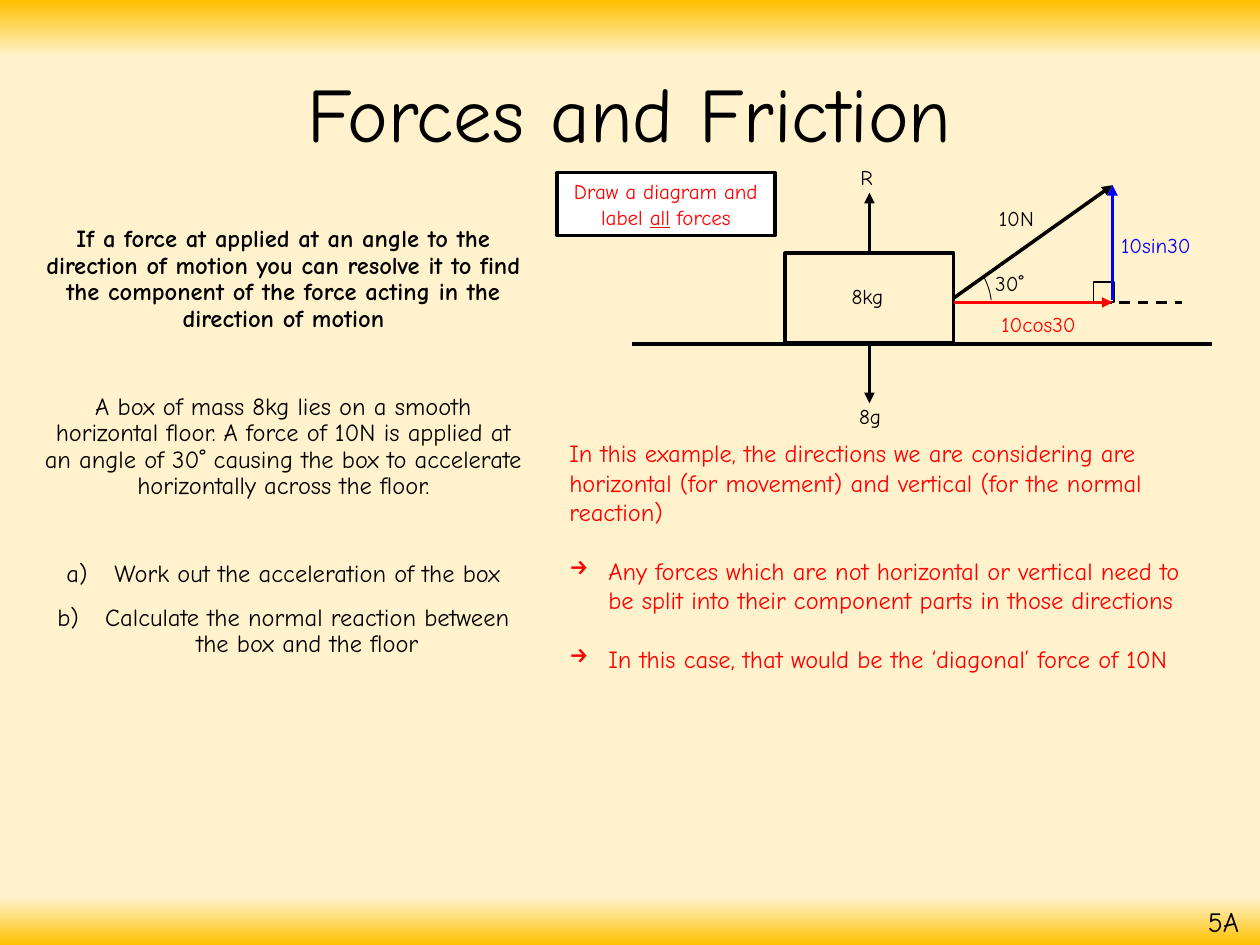
import pptx
import pptx.util
from lxml import etree
from pptx.dml.color import RGBColor
from pptx.enum.dml import MSO_LINE
from pptx.enum.shapes import MSO_CONNECTOR, MSO_SHAPE
from pptx.enum.text import MSO_ANCHOR, MSO_AUTO_SIZE, PP_ALIGN
from pptx.oxml.ns import qn

BLACK = RGBColor(0x00, 0x00, 0x00)
WHITE = RGBColor(0xFF, 0xFF, 0xFF)
RED = RGBColor(0xFF, 0x00, 0x00)
BLUE = RGBColor(0x00, 0x00, 0xFF)
GOLD = RGBColor(0xFF, 0xC0, 0x00)
CREAM = RGBColor(0xFF, 0xF2, 0xCC)
FONT = "Comic Neue"
Pt = pptx.util.Pt

deck = pptx.Presentation()
deck.slide_width = pptx.util.Inches(10)
deck.slide_height = pptx.util.Inches(7.5)
slide = deck.slides.add_slide(deck.slide_layouts[1])
shapes = slide.shapes


def grid(*cells):
    """Turn cell counts on a grid of 100 columns by 75 rows (square cells) into lengths."""
    return [round(cell * deck.slide_width / 100) for cell in cells]


def write(paragraph, text, size, color=BLACK, align=PP_ALIGN.LEFT, bold=False):
    paragraph.text = text
    paragraph.alignment = align
    for run in paragraph.runs:
        run.font.name = FONT
        run.font.size = Pt(size)
        run.font.bold = bold
        run.font.color.rgb = color


# Background: gold bands at the top and bottom
backdrop = slide.background.fill
backdrop.gradient()
backdrop.gradient_angle = 270
stops = slide.background._cSld.find(".//" + qn("a:gsLst"))
for stop in list(stops):
    stops.remove(stop)
for percent, color in ((0, GOLD), (6, CREAM), (95, CREAM), (100, GOLD)):
    stop = etree.SubElement(stops, qn("a:gs"), pos=str(percent * 1000))
    etree.SubElement(stop, qn("a:srgbClr"), val=str(color))

# Title
title = shapes.title
title.left, title.top, title.width, title.height = grid(6.9, 2.1, 86.2, 14.5)
title.text_frame.vertical_anchor = MSO_ANCHOR.MIDDLE
write(title.text_frame.paragraphs[0], "Forces and Friction", 44, align=PP_ALIGN.CENTER)
title.text_frame.paragraphs[0].line_spacing = 0.9

# Question on the left, explanation on the right
question = slide.placeholders[1]
question.left, question.top, question.width, question.height = grid(2.5, 17.5, 40, 49.5)
explanation = shapes.add_textbox(*grid(44.2, 34.3, 51.4, 26.9))
explanation.text_frame.word_wrap = True
question.text_frame.auto_size = MSO_AUTO_SIZE.NONE

# Each row: text, space before, bullet element with its attributes, bold
question_rows = [
    ("If a force at applied at an angle to the direction of motion you can resolve it "
     "to find the component of the force acting in the direction of motion",
     0, None, True),
    ("A box of mass 8kg lies on a smooth horizontal floor. A force of 10N is applied at "
     "an angle of 30˚ causing the box to accelerate horizontally across the floor.",
     35, None, False),
    ("Work out the acceleration of the box",
     35, ("a:buAutoNum", {"type": "alphaLcParenR"}), False),
    ("Calculate the normal reaction between the box and the floor",
     10, ("a:buAutoNum", {"type": "alphaLcParenR"}), False),
]
explanation_rows = [
    ("In this example, the directions we are considering are horizontal (for movement) "
     "and vertical (for the normal reaction)", 0, None, False),
    ("Any forces which are not horizontal or vertical need to be split into their "
     "component parts in those directions", 16.8, ("a:buChar", {"char": "→"}), False),
    ("In this case, that would be the ‘diagonal’ force of 10N",
     16.8, ("a:buChar", {"char": "→"}), False),
]
for column, rows, color, align, spacing, indent in (
    (question, question_rows, BLACK, PP_ALIGN.CENTER, 0.9, 3.8),
    (explanation, explanation_rows, RED, PP_ALIGN.LEFT, 1.0, 3.1),
):
    frame = column.text_frame
    for number, (text, before, bullet, bold) in enumerate(rows):
        paragraph = frame.add_paragraph() if number else frame.paragraphs[0]
        paragraph.line_spacing = spacing
        paragraph.space_before = Pt(before)
        paragraph.space_after = Pt(0)
        properties = paragraph._p.get_or_add_pPr()
        hang = grid(indent)[0] if bullet else 0
        properties.set("marL", str(hang))
        properties.set("indent", str(-hang))
        tag, attributes = bullet or ("a:buNone", {})
        etree.SubElement(properties, qn(tag), attributes)
        write(paragraph, text, 14, color, align, bold)

# Diagram: block, right-angle mark, angle arc and instruction box
block, right_angle, angle_arc, instruction = [
    shapes.add_shape(kind, *grid(*place))
    for kind, place in (
        (MSO_SHAPE.RECTANGLE, (62.3, 20.1, 13.4, 7.1)),
        (MSO_SHAPE.RECTANGLE, (86.8, 22.4, 1.6, 1.6)),
        (MSO_SHAPE.ARC, (68.7, 19.4, 10, 10)),
        (MSO_SHAPE.RECTANGLE, (44.2, 13.7, 17.3, 5)),
    )
]
for outline, weight in ((block, 2), (right_angle, 1), (angle_arc, 0.5), (instruction, 2)):
    outline.shadow.inherit = False
    outline.fill.background()
    outline.line.color.rgb = BLACK
    outline.line.width = Pt(weight)
angle_arc.adjustments[0] = 198.97
angle_arc.adjustments[1] = 212.03

instruction.fill.solid()
instruction.fill.fore_color.rgb = WHITE
instruction.text_frame.word_wrap = True
order = instruction.text_frame.paragraphs[0]
for part in ("Draw a diagram and label ", "all", " forces"):
    run = order.add_run()
    run.text = part
    run.font.name = FONT
    run.font.size = Pt(12)
    run.font.color.rgb = RED
    run.font.underline = part == "all"
order.alignment = PP_ALIGN.CENTER

# Floor, direction of motion and forces: start, end, colour, weight, arrow, block side
for start, end, color, weight, arrow, side in (
    ((75.7, 24), (93.8, 24), BLACK, 1.5, False, None),
    ((50.2, 27.3), (96.2, 27.3), BLACK, 2, False, None),
    ((75.7, 23.7), (88.3, 14.7), BLACK, 2, True, 3),
    ((75.7, 24), (88.3, 24), RED, 2, True, None),
    ((88.3, 23.8), (88.3, 14.7), BLUE, 2, True, None),
    ((69, 27.2), (69, 32), BLACK, 2, True, 2),
    ((69, 20.1), (69, 15.3), BLACK, 2, True, 0),
):
    force = shapes.add_connector(MSO_CONNECTOR.STRAIGHT, *grid(*start, *end))
    if side is not None:
        force.begin_connect(block, side)
    force.line.color.rgb = color
    force.line.width = Pt(weight)
    if arrow:
        etree.SubElement(force.line._get_or_add_ln(), qn("a:tailEnd"), type="triangle")
    elif weight < 2:
        force.line.dash_style = MSO_LINE.DASH
    etree.SubElement(force._element.spPr, qn("a:effectLst"))

# Diagram labels
for text, left, top, width, color in (
    ("30˚", 78, 21, 5, BLACK),
    ("10N", 78.3, 15.8, 5.2, BLACK),
    ("10sin30", 88, 18, 8.1, BLUE),
    ("10cos30", 78.5, 24.2, 8.4, RED),
    ("8g", 67.2, 31.5, 3.9, BLACK),
    ("8kg", 66.6, 22, 4.9, BLACK),
    ("R", 67.3, 12.6, 3.1, BLACK),
):
    label = shapes.add_textbox(*grid(left, top, width, 3))
    label.text_frame.word_wrap = False
    label.text_frame.auto_size = MSO_AUTO_SIZE.SHAPE_TO_FIT_TEXT
    write(label.text_frame.paragraphs[0], text, 12, color)

# Chapter reference
chapter = shapes.add_textbox(*grid(94.2, 71.6, 5.8, 3.4))
chapter.text_frame.word_wrap = True
write(chapter.text_frame.paragraphs[0], "5A", 16, align=PP_ALIGN.CENTER)
chapter.text_frame.paragraphs[0].line_spacing = 0.9

deck.save("out.pptx")
